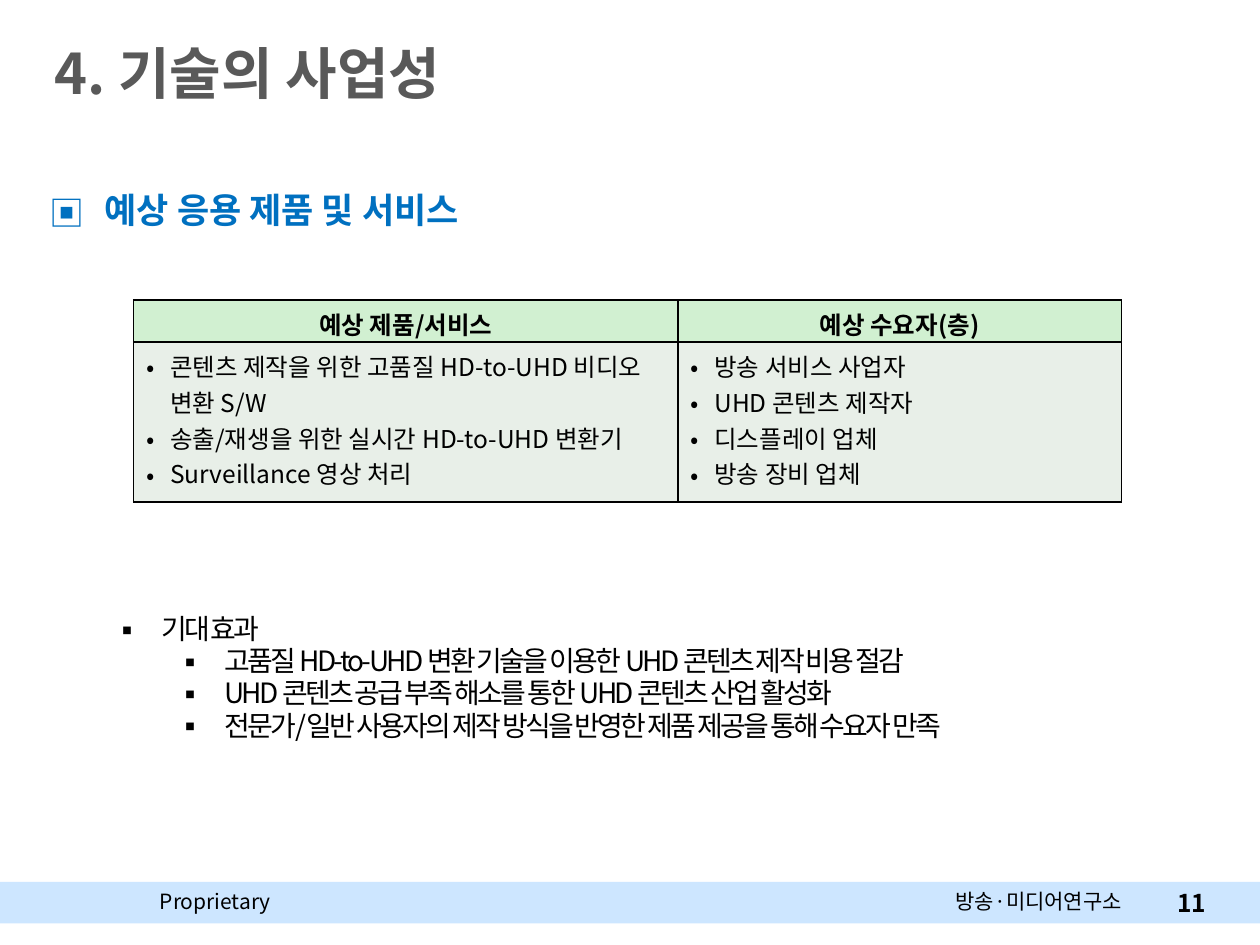
from dataclasses import dataclass
from typing import Optional

from lxml import etree
from pptx import Presentation
from pptx.dml.color import RGBColor
from pptx.enum.shapes import MSO_SHAPE
from pptx.enum.text import MSO_ANCHOR, MSO_AUTO_SIZE, PP_ALIGN
from pptx.oxml.ns import qn
from pptx.util import Inches, Pt

RECTANGLE = MSO_SHAPE.RECTANGLE
MIDDLE, TOP = MSO_ANCHOR.MIDDLE, MSO_ANCHOR.TOP
LEFT, CENTER, RIGHT = PP_ALIGN.LEFT, PP_ALIGN.CENTER, PP_ALIGN.RIGHT
JUSTIFY = PP_ALIGN.JUSTIFY
FIXED_SIZE = MSO_AUTO_SIZE.NONE

FONT = "Noto Sans CJK KR"
COLORS = {
    "text": "000000",
    "title": "595959",
    "heading": "0070C0",
    "footer": "CDE6FF",
    "header_cell": "D1F0D1",
    "body_cell": "E8EFE8",
}
BORDER_SIDES = ("a:lnL", "a:lnR", "a:lnT", "a:lnB")


@dataclass
class Style:
    size: float
    color: str = "text"
    bold: bool = False
    align: PP_ALIGN = LEFT
    line_spacing: float = 1.0
    character_spacing: Optional[float] = None


@dataclass
class Bullet:
    mark: str
    margin: float
    hanging: float


@dataclass
class FooterText:
    text: str
    left: float
    width: float
    height: float
    style: Style
    anchor: MSO_ANCHOR = TOP
    wrap: bool = True


def rgb(name: str) -> RGBColor:
    return RGBColor.from_string(COLORS[name])


def add_bullet(paragraph, bullet: Bullet, color: str) -> None:
    properties = paragraph._p.get_or_add_pPr()
    properties.set("marL", str(Inches(bullet.margin)))
    properties.set("indent", str(-Inches(bullet.hanging)))
    bullet_color = etree.SubElement(properties, qn("a:buClr"))
    etree.SubElement(bullet_color, qn("a:srgbClr"), val=COLORS[color])
    etree.SubElement(properties, qn("a:buFont"), typeface=FONT)
    etree.SubElement(properties, qn("a:buChar"), char=bullet.mark)


def write_paragraph(paragraph, text: str, style: Style, bullet: Optional[Bullet] = None) -> None:
    if bullet:
        add_bullet(paragraph, bullet, style.color)
    paragraph.alignment = style.align
    paragraph.space_before = Pt(0)
    paragraph.line_spacing = style.line_spacing
    run = paragraph.add_run()
    run.text = text
    run.font.name = FONT
    run.font.size = Pt(style.size)
    run.font.bold = style.bold
    run.font.color.rgb = rgb(style.color)
    properties = run._r.get_or_add_rPr()
    etree.SubElement(properties, qn("a:ea"), typeface=FONT)
    if style.character_spacing is not None:
        properties.set("spc", str(round(style.character_spacing * 100)))


def write_list(text_frame, items: list[tuple[str, Bullet]], style: Style) -> None:
    for index, (text, bullet) in enumerate(items):
        paragraph = text_frame.add_paragraph() if index else text_frame.paragraphs[0]
        write_paragraph(paragraph, text, style, bullet)


def place(shape, left: float, top: float, width: float, height: float) -> None:
    shape.left, shape.top = Inches(left), Inches(top)
    shape.width, shape.height = Inches(width), Inches(height)


def format_cell(cell, fill: str, anchor: MSO_ANCHOR) -> None:
    properties = cell._tc.get_or_add_tcPr()
    for side in BORDER_SIDES:
        line = etree.SubElement(properties, qn(side), w=str(Pt(1)))
        line_fill = etree.SubElement(line, qn("a:solidFill"))
        etree.SubElement(line_fill, qn("a:srgbClr"), val=COLORS["text"])
    cell.fill.solid()
    cell.fill.fore_color.rgb = rgb(fill)
    cell.vertical_anchor = anchor


def add_footer_text(slide, footer: FooterText) -> None:
    box = slide.shapes.add_textbox(
        Inches(footer.left), Inches(7), Inches(footer.width), Inches(footer.height))
    box.text_frame.word_wrap = footer.wrap
    box.text_frame.vertical_anchor = footer.anchor
    write_paragraph(box.text_frame.paragraphs[0], footer.text, footer.style)


def add_market_table(slide) -> None:
    columns = [
        ("예상 제품/서비스", 4.32, [
            "콘텐츠 제작을 위한 고품질 HD-to-UHD 비디오 변환 S/W",
            "송출/재생을 위한 실시간 HD-to-UHD 변환기",
            "Surveillance 영상 처리",
        ]),
        ("예상 수요자(층)", 3.52, [
            "방송 서비스 사업자",
            "UHD 콘텐츠 제작자",
            "디스플레이 업체",
            "방송 장비 업체",
        ]),
    ]
    dot = Bullet("•", 0.19, 0.19)
    table = slide.shapes.add_table(
        2, len(columns), Inches(1.06), Inches(2.38), Inches(7.84), Inches(1.6)).table
    table.rows[0].height, table.rows[1].height = Inches(0.33), Inches(1.27)
    for index, (header, width, items) in enumerate(columns):
        table.columns[index].width = Inches(width)
        header_cell, body_cell = table.cell(0, index), table.cell(1, index)
        format_cell(header_cell, "header_cell", MIDDLE)
        write_paragraph(header_cell.text_frame.paragraphs[0], header,
                        Style(14, bold=True, align=CENTER))
        format_cell(body_cell, "body_cell", TOP)
        write_list(body_cell.text_frame, [(item, dot) for item in items], Style(14))


def main() -> None:
    presentation = Presentation()
    presentation.slide_width, presentation.slide_height = Inches(10), Inches(7.5)
    slide = presentation.slides.add_slide(presentation.slide_layouts[1])

    # Footer band and its texts
    band = slide.shapes.add_shape(RECTANGLE, 0, Inches(7), Inches(10), Inches(0.33))
    band.shadow.inherit = False
    band.fill.solid()
    band.fill.fore_color.rgb = rgb("footer")
    band.line.fill.background()
    for footer in (
        FooterText("Proprietary", 1.17, 1.33, 0.3, Style(12)),
        FooterText("방송·미디어연구소", 7.26, 1.97, 0.3, Style(12, align=CENTER)),
        FooterText("11", 9.19, 0.48, 0.33, Style(14, bold=True, align=RIGHT), MIDDLE, False),
    ):
        add_footer_text(slide, footer)

    # Title and section heading
    title, body = slide.shapes.title, slide.placeholders[1]
    place(title, 0.33, 0.25, 7.83, 0.64)
    title.text_frame.auto_size = FIXED_SIZE
    title.text_frame.vertical_anchor = MIDDLE
    write_paragraph(title.text_frame.paragraphs[0], "4. 기술의 사업성",
                    Style(32, "title", bold=True))
    place(body, 0.29, 1.47, 9.38, 5.2)
    body.text_frame.auto_size = FIXED_SIZE
    write_list(body.text_frame, [("예상 응용 제품 및 서비스", Bullet("▣", 0.44, 0.44))],
               Style(20, "heading", bold=True, align=JUSTIFY, line_spacing=0.96))

    # Products and customers
    add_market_table(slide)

    # Expected effects
    effects = slide.shapes.add_textbox(Inches(0.28), Inches(4.82), Inches(9.61), Inches(1.34))
    effects.text_frame.word_wrap = True
    outer, inner = Bullet("▪", 0.9, 0.38), Bullet("▪", 1.4, 0.38)
    write_list(effects.text_frame, [
        ("기대 효과", outer),
        ("고품질 HD-to-UHD 변환 기술을 이용한 UHD 콘텐츠 제작 비용 절감", inner),
        ("UHD 콘텐츠 공급 부족 해소를 통한 UHD 콘텐츠 산업 활성화", inner),
        ("전문가/일반 사용자의 제작 방식을 반영한 제품 제공을 통해 수요자 만족", inner),
    ], Style(16, align=JUSTIFY, line_spacing=0.96, character_spacing=-1.5))

    presentation.save("out.pptx")


if __name__ == "__main__":
    main()
